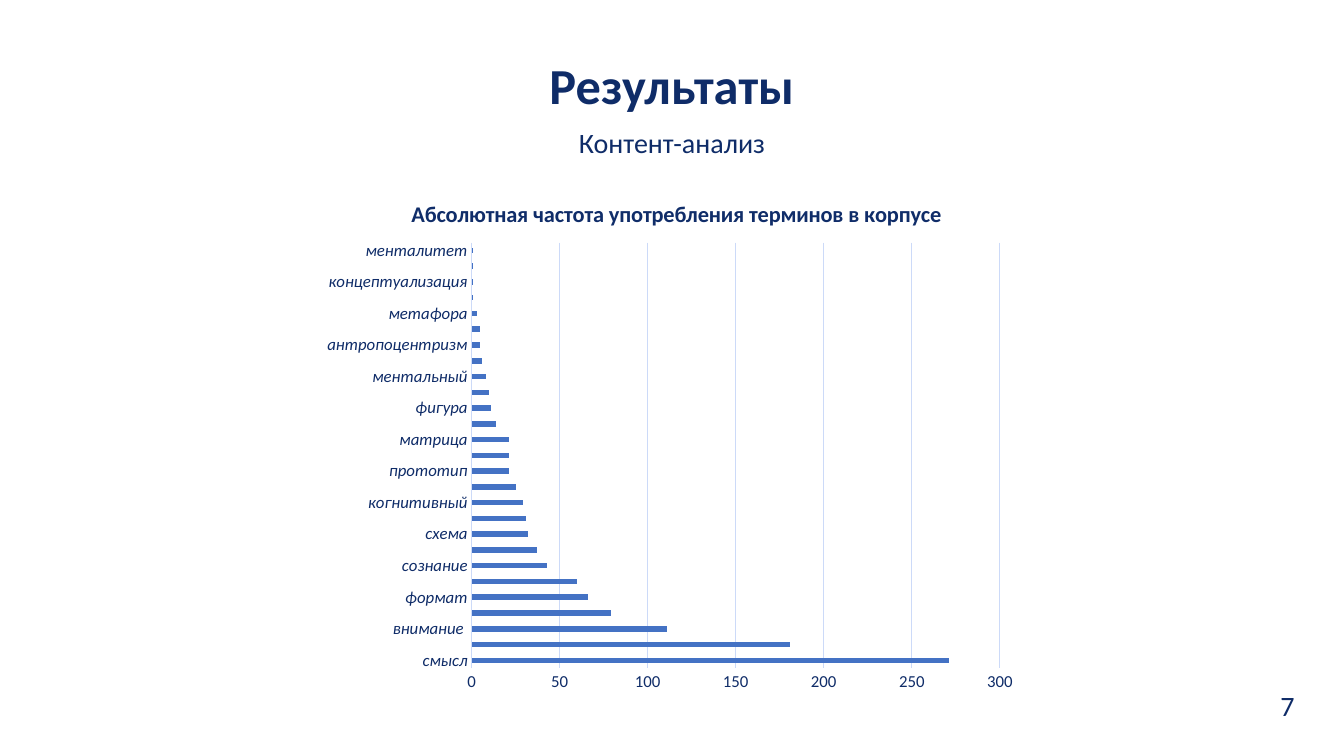
from lxml import etree
from pptx import Presentation
from pptx.chart.data import CategoryChartData
from pptx.dml.color import RGBColor
from pptx.enum.chart import XL_CHART_TYPE as ChartType, XL_TICK_MARK as Tick
from pptx.enum.text import MSO_ANCHOR as Anchor, PP_ALIGN as Align
from pptx.oxml.ns import qn
from pptx.util import Inches, Pt

NAVY = RGBColor(0x0F, 0x2C, 0x68)
TITLE_NAVY = RGBColor(0x10, 0x2D, 0x69)
BLUE = RGBColor(0x44, 0x72, 0xC4)
PALE = RGBColor(0xCC, 0xDA, 0xF8)

FREQUENCIES = [
    ("смысл", 271), ("знание", 181), ("внимание ", 111), ("память", 79),
    ("формат", 66), ("категория", 60), ("сознание", 43), ("фон", 37),
    ("схема", 32), ("сценарий", 31), ("когнитивный", 29), ("восприятие", 25),
    ("прототип", 21), ("ассоциация", 21), ("матрица", 21),
    ("концептуальный", 14), ("фигура", 11), ("картина мира", 10),
    ("ментальный", 8), ("стереотип", 6), ("антропоцентризм", 5),
    ("концепт", 5), ("метафора", 3), ("репрезентация", 1),
    ("концептуализация", 1), ("ассоциативный", 1), ("менталитет", 1),
]


def set_layout(parent, index, **values):
    """Place a chart part by fractions of the chart area."""
    for old in parent.findall(qn("c:layout")):
        parent.remove(old)
    layout = etree.Element(qn("c:layout"))
    manual = etree.SubElement(layout, qn("c:manualLayout"))
    for name, value in values.items():
        etree.SubElement(manual, qn(f"c:{name}")).set("val", str(value))
    parent.insert(index, layout)


class SlideBuilder:
    font_name = "Calibri"

    def __init__(self, prs):
        self.s = prs.slides.add_slide(prs.slide_layouts[6])

    def style(self, font, size, color=NAVY, **extra):
        values = {"name": self.font_name, "size": Pt(size), **extra}
        for name, value in values.items():
            setattr(font, name, value)
        font.color.rgb = color

    def line(self, fmt):
        fmt.line.color.rgb = PALE
        fmt.line.width = Pt(0.75)

    def text(self, text, box, size, align=Align.CENTER, **extra):
        sp = self.s.shapes.add_textbox(*map(Inches, box))
        tf = sp.text_frame
        tf.word_wrap = True
        tf.vertical_anchor = Anchor.TOP
        p = tf.paragraphs[0]
        p.alignment = align
        r = p.add_run()
        r.text = text
        self.style(r.font, size, **extra)

    def bar_chart(self, title, rows, box):
        data = CategoryChartData()
        data.categories = [term for term, _ in rows]
        data.add_series("Частота", [count for _, count in rows])
        chart = self.s.shapes.add_chart(
            ChartType.BAR_CLUSTERED, *map(Inches, box), data).chart
        chart.has_legend = False
        self.style(chart.font, 10)

        chart.has_title = True
        p = chart.chart_title.text_frame.paragraphs[0]
        r = p.add_run()
        r.text = title
        self.style(r.font, 16, TITLE_NAVY, bold=True)
        set_layout(chart.chart_title.element, 1,
                   xMode="edge", yMode="edge", x=0.13, y=0.04)
        set_layout(chart.element.find(f".//{qn('c:plotArea')}"), 0,
                   layoutTarget="inner", xMode="edge", yMode="edge",
                   x=0.22, y=0.13, w=0.74, h=0.8)

        plot = chart.plots[0]
        plot.gap_width = 182
        plot.vary_by_categories = False
        bars = plot.series[0].format.fill
        bars.solid()
        bars.fore_color.rgb = BLUE

        terms, counts = chart.category_axis, chart.value_axis
        for axis, italic in ((terms, True), (counts, False)):
            axis.major_tick_mark = axis.minor_tick_mark = Tick.NONE
            self.style(axis.tick_labels.font, 12, italic=italic)
        self.line(terms.format)
        counts.format.line.fill.background()
        counts.minimum_scale, counts.maximum_scale = 0, 300
        counts.major_unit = 50
        counts.has_major_gridlines = True
        self.line(counts.major_gridlines.format)


def main():
    prs = Presentation()
    prs.slide_width, prs.slide_height = Inches(13.33), Inches(7.5)
    slide = SlideBuilder(prs)
    slide.text("7", (12.6, 6.78, 0.44, 0.44), 20, Align.LEFT)
    slide.bar_chart("Абсолютная частота употребления терминов в корпусе",
                    FREQUENCIES, (3.12, 1.72, 7.08, 5.28))
    slide.text("Результаты", (5.35, 0.49, 2.63, 0.71), 36, Align.LEFT, bold=True)
    slide.text("Контент-анализ", (5.61, 1.2, 2.11, 0.44), 20)
    prs.save("out.pptx")


if __name__ == "__main__":
    main()
